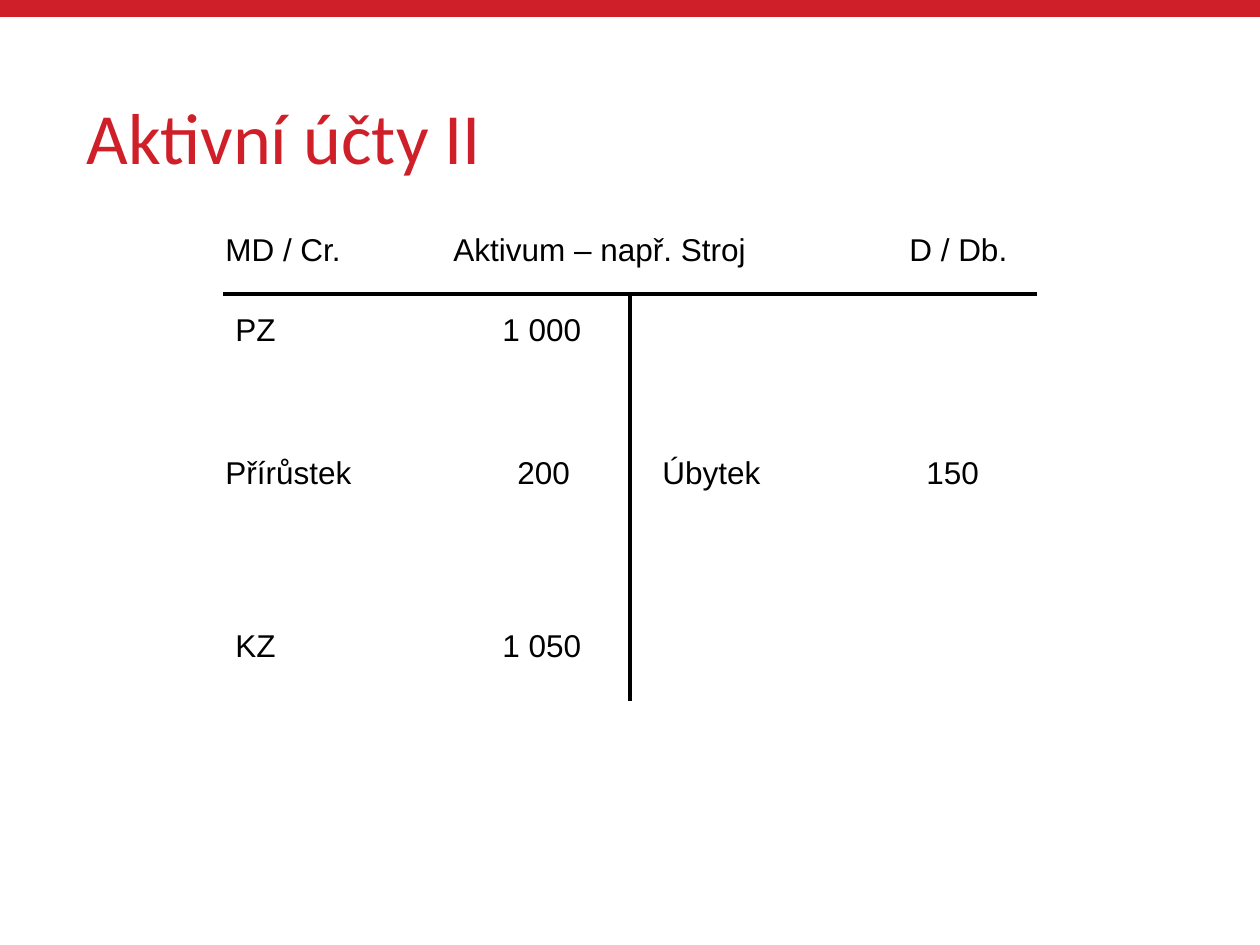
from lxml import etree
from pptx import Presentation
from pptx.dml.color import RGBColor
from pptx.enum.shapes import MSO_CONNECTOR, MSO_SHAPE
from pptx.enum.text import MSO_ANCHOR, MSO_AUTO_SIZE
from pptx.oxml.ns import qn
from pptx.util import Emu, Pt

RECTANGLE = MSO_SHAPE.RECTANGLE
STRAIGHT = MSO_CONNECTOR.STRAIGHT
TOP = MSO_ANCHOR.TOP
MIDDLE = MSO_ANCHOR.MIDDLE
GROW = MSO_AUTO_SIZE.SHAPE_TO_FIT_TEXT
FIXED = MSO_AUTO_SIZE.NONE
EMU_PER_PX = 914400 // 126
WIDTH, HEIGHT = 1260, 945
RED = "CF1F28"
BLACK = "000000"
LABEL_HEIGHT = 50
ENTRY_WIDTH = 387


def px(length):
    return Emu(length * EMU_PER_PX)


def color(value):
    return RGBColor.from_string(value)


def add_bar(slide, left, top, width, height, fill):
    shape = slide.shapes.add_shape(RECTANGLE, px(left), px(top), px(width), px(height))
    shape.shadow.inherit = False
    shape.fill.solid()
    shape.fill.fore_color.rgb = color(fill)
    shape.line.fill.background()


def add_line(slide, start_x, start_y, end_x, end_y):
    line = slide.shapes.add_connector(
        STRAIGHT, px(start_x), px(start_y), px(end_x), px(end_y))
    line.line.color.rgb = color(BLACK)
    line.line.width = Pt(2.5)
    etree.SubElement(line._element.spPr, qn("a:effectLst"))


def add_tab_stop(paragraph, position):
    properties = paragraph._p.get_or_add_pPr()
    tabs = etree.SubElement(properties, qn("a:tabLst"))
    etree.SubElement(tabs, qn("a:tab"), pos=str(px(position)), algn="l")


def add_text(slide, text, left, top, width, height=LABEL_HEIGHT, *, font="Arial",
             size=18, fill=BLACK, anchor=TOP, auto_size=GROW, spacing=None, tab=None):
    box = slide.shapes.add_textbox(px(left), px(top), px(width), px(height))
    frame = box.text_frame
    frame.word_wrap = True
    frame.auto_size = auto_size
    frame.vertical_anchor = anchor
    paragraph = frame.paragraphs[0]
    if spacing:
        paragraph.line_spacing = spacing
    if tab:
        add_tab_stop(paragraph, tab)
    run = paragraph.add_run()
    run.text = text
    run.font.name = font
    run.font.size = Pt(size)
    run.font.color.rgb = color(fill)


def add_entry(slide, name, amount, left, top, amount_offset):
    add_text(slide, f"{name}\t{amount}", left, top, ENTRY_WIDTH, tab=amount_offset)


def main():
    presentation = Presentation()
    presentation.slide_width = px(WIDTH)
    presentation.slide_height = px(HEIGHT)
    slide = presentation.slides.add_slide(presentation.slide_layouts[6])

    add_bar(slide, 0, 0, WIDTH, 17, RED)
    add_text(slide, "Aktivní účty II", 74, 50, 1111, 183, font="Calibri", size=41.2,
             fill=RED, anchor=MIDDLE, auto_size=FIXED, spacing=0.9)

    add_line(slide, 223, 294, 1037, 294)
    add_line(slide, 630, 294, 630, 701)

    for text, left, width in (("Aktivum – např. Stroj", 441, 367),
                              ("MD / Cr.", 213, 179),
                              ("D / Db.", 897, 129)):
        add_text(slide, text, left, 224, width)

    for entry in (("PZ", "1 000", 223, 304, 267),
                  ("Přírůstek", "200", 213, 447, 292),
                  ("Úbytek", "150", 650, 447, 264),
                  ("KZ", "1 050", 223, 620, 267)):
        add_entry(slide, *entry)

    presentation.save("out.pptx")


if __name__ == "__main__":
    main()
